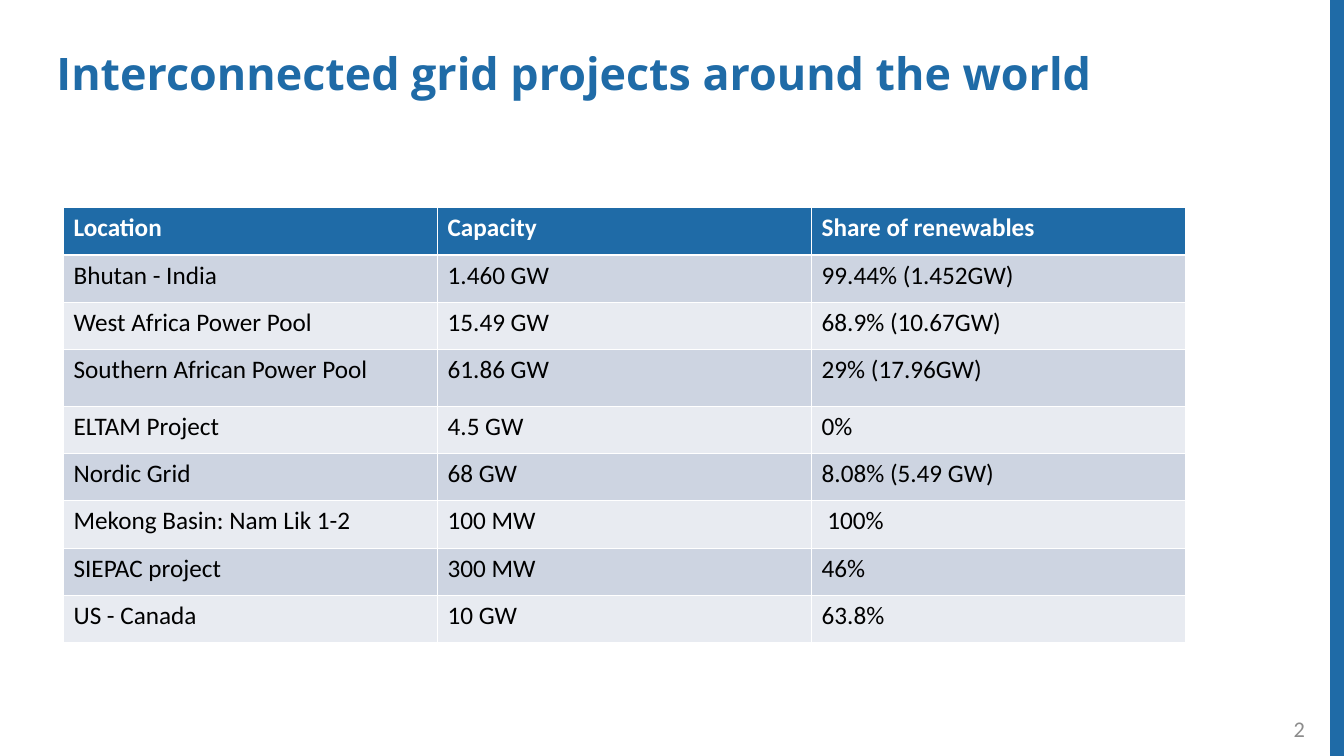
import pptx
import pptx.dml.color
import pptx.enum.shapes
import pptx.enum.text
import pptx.util
from lxml import etree

Inches, Pt = pptx.util.Inches, pptx.util.Pt
RGBColor = pptx.dml.color.RGBColor
PP_ALIGN = pptx.enum.text.PP_ALIGN
MSO_ANCHOR = pptx.enum.text.MSO_ANCHOR

# Content
HEADING = "Interconnected grid projects around the world"
PAGE = "2"
PROJECTS = [
    ("Location", "Capacity", "Share of renewables"),
    ("Bhutan - India", "1.460 GW", "99.44% (1.452GW)"),
    ("West Africa Power Pool", "15.49 GW", "68.9% (10.67GW)"),
    ("Southern African Power Pool", "61.86 GW", "29% (17.96GW)"),
    ("ELTAM Project", "4.5 GW", "0%"),
    ("Nordic Grid", "68 GW", "8.08% (5.49 GW)"),
    ("Mekong Basin: Nam Lik 1-2", "100 MW", " 100%"),
    ("SIEPAC project", "300 MW", "46%"),
    ("US - Canada", "10 GW", "63.8%"),
]

# Colours and formats
BLUE = RGBColor(0x1F, 0x6B, 0xA7)
WHITE = RGBColor(0xFF, 0xFF, 0xFF)
BLACK = RGBColor(0, 0, 0)
GREY = RGBColor(0x8C, 0x8C, 0x8C)
BANDS = (RGBColor(0xE8, 0xEB, 0xF1), RGBColor(0xCD, 0xD4, 0xE1))
HEADING_FONT = {"name": "Open Sans", "size": Pt(32), "bold": True}
PAGE_FONT = {"name": "Calibri", "size": Pt(16)}
HEADER_FONT = {"name": "Calibri", "size": Pt(18), "bold": True}
BODY_FONT = {"name": "Calibri", "size": Pt(18), "bold": False}

# Layout
WIDTH, HEIGHT = Inches(13.33), Inches(7.5)
BAR_X = Inches(13.27)
COLUMN_WIDTH = Inches(3.71)
ROW_HEIGHT = Inches(0.47)
TALL_ROW, TALL_HEIGHT = 3, Inches(0.56)


def write(paragraph, text, font, color):
    paragraph.text = text
    for name, value in font.items():
        setattr(paragraph.font, name, value)
    paragraph.font.color.rgb = color


deck = pptx.Presentation()
deck.slide_width, deck.slide_height = WIDTH, HEIGHT
slide = deck.slides.add_slide(deck.slide_layouts[5])

# Bar on the right edge
bar = slide.shapes.add_connector(
    pptx.enum.shapes.MSO_CONNECTOR.STRAIGHT, BAR_X, 0, BAR_X, HEIGHT)
bar.line.color.rgb = BLUE
bar.line.width = Pt(12)
etree.SubElement(bar.line._get_or_add_ln().getparent(),
                 pptx.oxml.ns.qn("a:effectLst"))

# Heading
heading = slide.shapes.title
heading.left, heading.top = Inches(0.46), Inches(0.46)
heading.width, heading.height = Inches(12.4), Inches(0.98)
heading.text_frame.vertical_anchor = MSO_ANCHOR.TOP
heading.text_frame.auto_size = pptx.enum.text.MSO_AUTO_SIZE.NONE
heading_line = heading.text_frame.paragraphs[0]
heading_line.alignment = PP_ALIGN.LEFT
heading_line.line_spacing = 0.9
write(heading_line, HEADING, HEADING_FONT, BLUE)

# Page number
page = slide.shapes.add_textbox(
    Inches(10.04), Inches(7.03), Inches(3), Inches(0.4)).text_frame
page.word_wrap = True
page.vertical_anchor = MSO_ANCHOR.MIDDLE
page.paragraphs[0].alignment = PP_ALIGN.RIGHT
write(page.paragraphs[0], PAGE, PAGE_FONT, GREY)

# Project table; its default style draws the white rules
columns = len(PROJECTS[0])
table_height = ROW_HEIGHT * (len(PROJECTS) - 1) + TALL_HEIGHT
projects = slide.shapes.add_table(
    len(PROJECTS), columns, Inches(0.63), Inches(2.06),
    COLUMN_WIDTH * columns, table_height).table
for column in projects.columns:
    column.width = COLUMN_WIDTH
for r, entries in enumerate(PROJECTS):
    header = r == 0
    projects.rows[r].height = TALL_HEIGHT if r == TALL_ROW else ROW_HEIGHT
    for c, entry in enumerate(entries):
        cell = projects.cell(r, c)
        cell.fill.solid()
        cell.fill.fore_color.rgb = BLUE if header else BANDS[r % 2]
        write(cell.text_frame.paragraphs[0], entry,
              HEADER_FONT if header else BODY_FONT,
              WHITE if header else BLACK)

deck.save("out.pptx")
